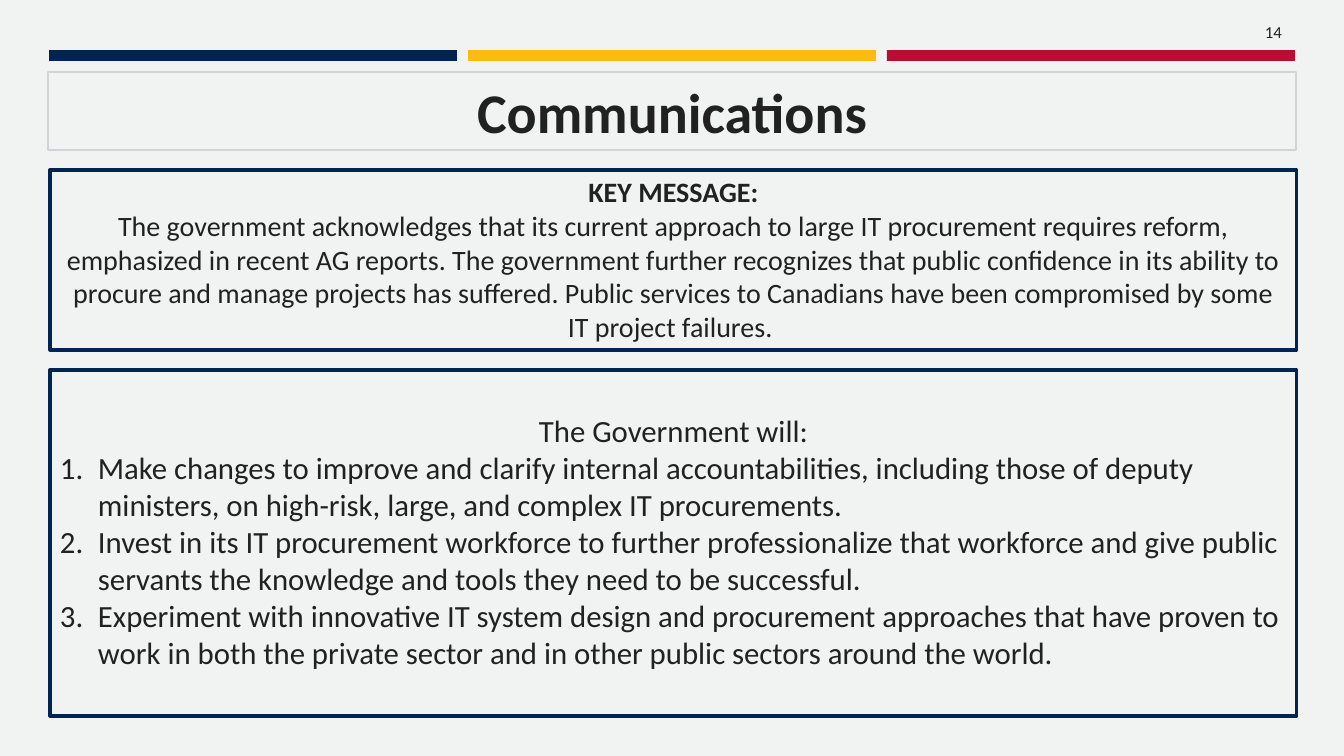
"""Build the Communications slide with its key message and commitments."""
from dataclasses import dataclass

from lxml.etree import SubElement
from pptx import Presentation
from pptx.dml.color import RGBColor
from pptx.enum.shapes import MSO_SHAPE
from pptx.enum.text import MSO_ANCHOR, PP_ALIGN
from pptx.oxml.ns import qn
from pptx.util import Emu, Pt

TITLE = "Communications"
PAGE_NUMBER = "14"
KEY_HEADING = "KEY MESSAGE:"
KEY_MESSAGE = (
    "The government acknowledges that its current approach to large IT procurement "
    "requires reform, emphasized in recent AG reports. The government further recognizes "
    "that public confidence in its ability to procure and manage projects has suffered. "
    "Public services to Canadians have been compromised by some IT project failures. "
)
COMMITMENT_HEADING = "The Government will:"
COMMITMENTS = [
    "Make changes to improve and clarify internal accountabilities, including those of "
    "deputy ministers, on high-risk, large, and complex IT procurements.",
    "Invest in its IT procurement workforce to further professionalize that workforce and "
    "give public servants the knowledge and tools they need to be successful.",
    "Experiment with innovative IT system design and procurement approaches that have "
    "proven to work in both the private sector and in other public sectors around the world. ",
]


@dataclass(frozen=True)
class Theme:
    font: str = "Calibri"
    background: str = "F1F2F2"
    text: str = "212121"
    navy: str = "002452"
    gold: str = "FABD0F"
    red: str = "B90E31"
    grey: str = "D1D3D4"
    title_size: int = 40
    key_size: int = 20
    list_size: int = 22
    number_size: int = 12
    title_line: float = 1.5
    panel_line: float = 2.25


THEME = Theme()
EMU_PER_PX = 914400 / 100.8
SLIDE_SIZE = (1344, 756)
BAR_LEFT, BAR_TOP, BAR_WIDTH, BAR_HEIGHT, BAR_GAP = 49, 50, 408, 11, 11
TITLE_BOX = (48, 72, 1248, 78)
NUMBER_BOX = (1255, 17, 41, 30)
PANEL_LEFT, PANEL_WIDTH = 50, 1247
KEY_TOP, KEY_HEIGHT = 170, 180
LIST_TOP, LIST_HEIGHT = 370, 346
SIDE_INSET, EDGE_INSET, LIST_INSET = 10, 5, 42
LIST_INDENT = 38


def px(length):
    return Emu(round(length * EMU_PER_PX))


def color(code):
    return RGBColor.from_string(code)


def outline(shape, code, width):
    shape.fill.background()
    shape.line.color.rgb = color(code)
    shape.line.width = Pt(width)


def prepare_text(shape, anchor, top=EDGE_INSET):
    frame = shape.text_frame
    frame.word_wrap = True
    frame.vertical_anchor = anchor
    frame.margin_left = frame.margin_right = px(SIDE_INSET)
    frame.margin_top, frame.margin_bottom = px(top), px(EDGE_INSET)
    return frame


def write(para, text, size, align=PP_ALIGN.CENTER, bold=False):
    para.alignment = align
    span = para.add_run()
    span.text = text
    span.font.name = THEME.font
    span.font.size = Pt(size)
    span.font.bold = bold
    span.font.color.rgb = color(THEME.text)


def number(para):
    properties = para._p.get_or_add_pPr()
    properties.set("marL", str(px(LIST_INDENT)))
    properties.set("indent", str(-px(LIST_INDENT)))
    SubElement(properties, qn("a:buFont"), typeface="+mj-lt")
    SubElement(properties, qn("a:buAutoNum"), type="arabicPeriod")


def add_rectangle(page, left, top, width, height):
    box = page.shapes.add_shape(
        MSO_SHAPE.RECTANGLE, px(left), px(top), px(width), px(height))
    box.shadow.inherit = False
    return box


def add_panel(page, top, height, inset):
    box = add_rectangle(page, PANEL_LEFT, top, PANEL_WIDTH, height)
    outline(box, THEME.navy, THEME.panel_line)
    return prepare_text(box, MSO_ANCHOR.TOP, inset)


def add_bars(page):
    for index, code in enumerate((THEME.navy, THEME.gold, THEME.red)):
        left = BAR_LEFT + index * (BAR_WIDTH + BAR_GAP)
        bar = add_rectangle(page, left, BAR_TOP, BAR_WIDTH, BAR_HEIGHT)
        bar.fill.solid()
        bar.fill.fore_color.rgb = color(code)
        bar.line.fill.background()


def add_title(page):
    title = page.shapes.title
    title.left, title.top, title.width, title.height = map(px, TITLE_BOX)
    outline(title, THEME.grey, THEME.title_line)
    frame = prepare_text(title, MSO_ANCHOR.MIDDLE)
    write(frame.paragraphs[0], TITLE, THEME.title_size, bold=True)


def add_page_number(page):
    box = page.shapes.add_textbox(*map(px, NUMBER_BOX))
    frame = prepare_text(box, MSO_ANCHOR.TOP)
    write(frame.paragraphs[0], PAGE_NUMBER, THEME.number_size, PP_ALIGN.LEFT)


def add_key_message(page):
    frame = add_panel(page, KEY_TOP, KEY_HEIGHT, EDGE_INSET)
    write(frame.paragraphs[0], KEY_HEADING, THEME.key_size, bold=True)
    write(frame.add_paragraph(), KEY_MESSAGE, THEME.key_size)


def add_commitments(page):
    frame = add_panel(page, LIST_TOP, LIST_HEIGHT, LIST_INSET)
    write(frame.paragraphs[0], COMMITMENT_HEADING, THEME.list_size)
    for commitment in COMMITMENTS:
        para = frame.add_paragraph()
        write(para, commitment, THEME.list_size, PP_ALIGN.LEFT)
        number(para)


def main():
    deck = Presentation()
    deck.slide_width, deck.slide_height = map(px, SLIDE_SIZE)
    page = deck.slides.add_slide(deck.slide_layouts.get_by_name("Title Only"))
    page.background.fill.solid()
    page.background.fill.fore_color.rgb = color(THEME.background)
    add_bars(page)
    add_title(page)
    add_page_number(page)
    add_commitments(page)
    add_key_message(page)
    deck.save("out.pptx")


if __name__ == "__main__":
    main()
